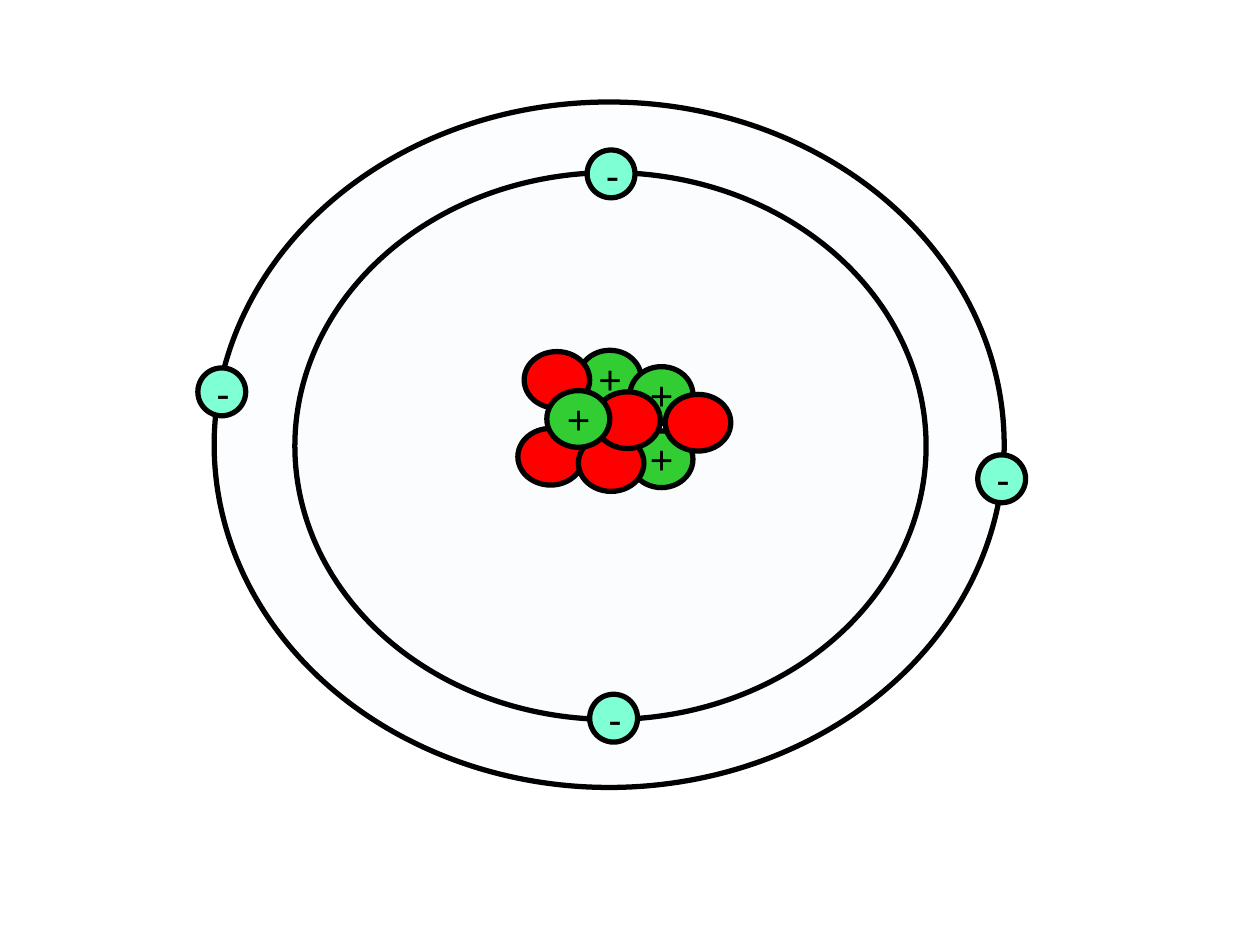
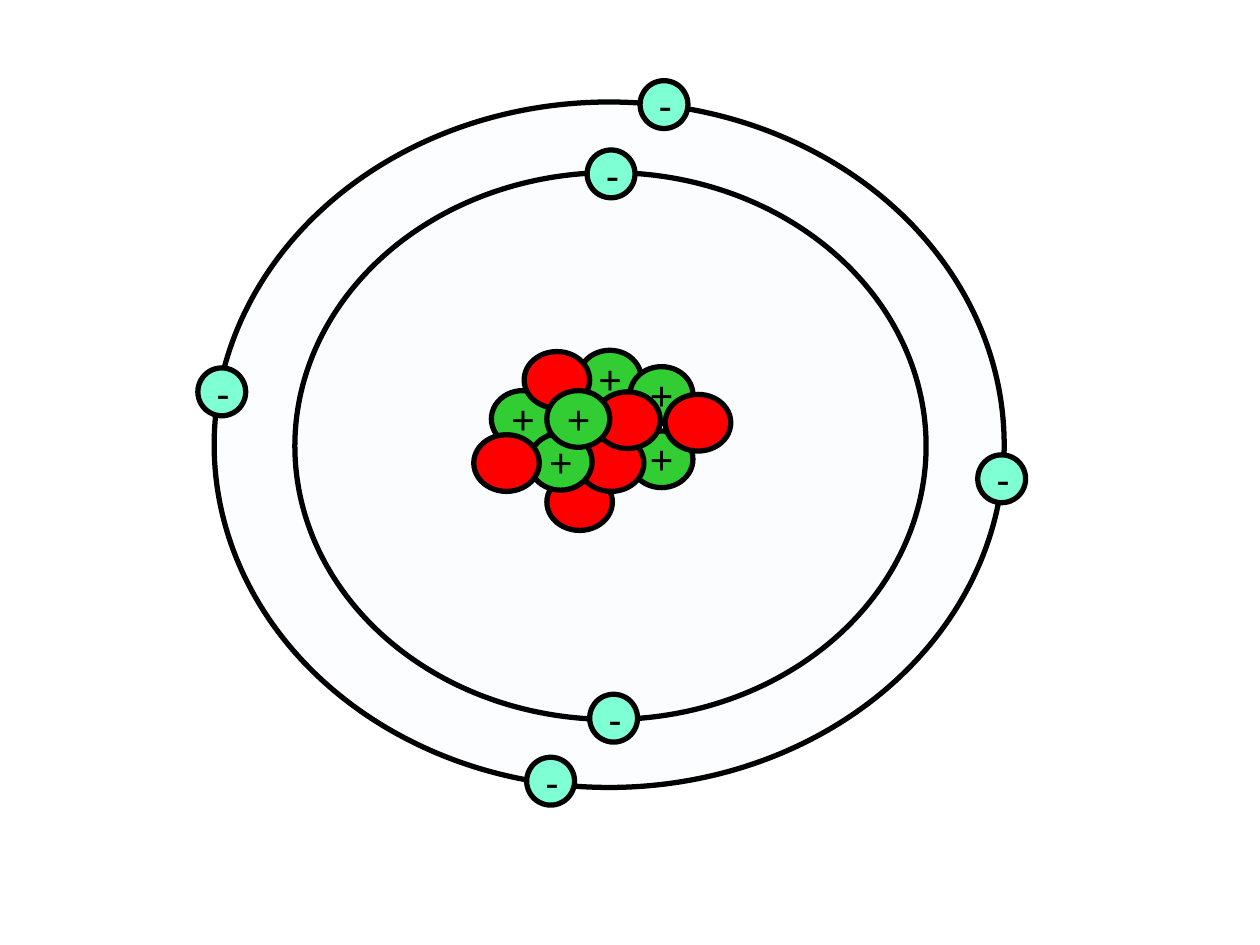
from dataclasses import dataclass

from pptx import Presentation
from pptx.dml.color import RGBColor as Color
from pptx.enum.shapes import MSO_SHAPE as Shape
from pptx.enum.text import MSO_AUTO_SIZE as AutoSize
from pptx.util import Emu, Pt

PX = 9144  # EMU per px, 100 px to the inch


@dataclass(frozen=True)
class Theme:
    font: str = "Arial"
    sign_size: int = 23
    outline_width: int = 3
    ink: str = "000000"
    outer_shell: str = "FCFDFF"
    inner_shell: str = "FAFCFE"
    electron: str = "7FFFD4"
    proton: str = "32CD32"
    neutron: str = "FF0000"


class AtomDeck:
    def __init__(self, theme, width, height):
        self.theme = theme
        self.deck = Presentation()
        self.deck.slide_width = Emu(width * PX)
        self.deck.slide_height = Emu(height * PX)
        self.page = None

    def add_page(self):
        self.page = self.deck.slides.add_slide(self.deck.slide_layouts[6])

    def ellipse(self, shapes, left, top, width, height, fill):
        oval = shapes.add_shape(
            Shape.OVAL, *(Emu(n * PX) for n in (left, top, width, height)))
        oval.shadow.inherit = False
        oval.fill.solid()
        oval.fill.fore_color.rgb = Color.from_string(fill)
        oval.line.color.rgb = Color.from_string(self.theme.ink)
        oval.line.width = Pt(self.theme.outline_width)

    def sign(self, shapes, text, left, top, width, height=49):
        box = shapes.add_textbox(
            *(Emu(n * PX) for n in (left, top, width, height)))
        frame = box.text_frame
        frame.word_wrap = True
        frame.auto_size = AutoSize.SHAPE_TO_FIT_TEXT
        para = frame.paragraphs[0]
        para.text = text
        para.font.name = self.theme.font
        para.font.size = Pt(self.theme.sign_size)
        para.font.color.rgb = Color.from_string(self.theme.ink)

    def shells(self):
        shapes = self.page.shapes
        self.ellipse(shapes, 170, 81, 627, 544, self.theme.outer_shell)
        self.ellipse(shapes, 234, 137, 501, 434, self.theme.inner_shell)

    def electron(self, left, top):
        group = self.page.shapes.add_group_shape()
        self.ellipse(group.shapes, left, top, 38, 38, self.theme.electron)
        self.sign(group.shapes, "-", left + 5, top - 5, 70)

    def proton(self, left, top):
        group = self.page.shapes.add_group_shape()
        self.ellipse(group.shapes, left, top, 50, 45, self.theme.proton)
        self.sign(group.shapes, "+", left + 6, top - 2, 85)

    def neutron(self, left, top):
        self.ellipse(self.page.shapes, left, top, 52, 45, self.theme.neutron)

    def atom(self, electrons, nucleus):
        """Add a page with one atom; the nucleus is listed from back to front."""
        self.add_page()
        self.shells()
        for place in electrons:
            self.electron(*place)
        for add_particle, left, top in nucleus:
            add_particle(self, left, top)


PROTON, NEUTRON = AtomDeck.proton, AtomDeck.neutron

# What both atoms have in common
ELECTRONS = [(466, 119), (468, 551), (776, 361), (157, 292)]
NUCLEUS_BACK = [(PROTON, 459, 278), (PROTON, 500, 342), (NEUTRON, 416, 279)]
NUCLEUS_MIDDLE = [(NEUTRON, 459, 345)]
NUCLEUS_FRONT = [(PROTON, 500, 291), (NEUTRON, 528, 313),
                 (NEUTRON, 472, 311), (PROTON, 434, 310)]


def main():
    atoms = AtomDeck(Theme(), 1000, 750)
    atoms.atom(
        ELECTRONS,
        NUCLEUS_BACK + [(NEUTRON, 411, 340)] + NUCLEUS_MIDDLE + NUCLEUS_FRONT)
    atoms.atom(
        ELECTRONS + [(508, 64), (418, 601)],
        [(PROTON, 390, 310)] + NUCLEUS_BACK
        + [(NEUTRON, 434, 376)] + NUCLEUS_MIDDLE
        + [(PROTON, 420, 344), (NEUTRON, 376, 345)] + NUCLEUS_FRONT)
    atoms.deck.save("out.pptx")


if __name__ == "__main__":
    main()
